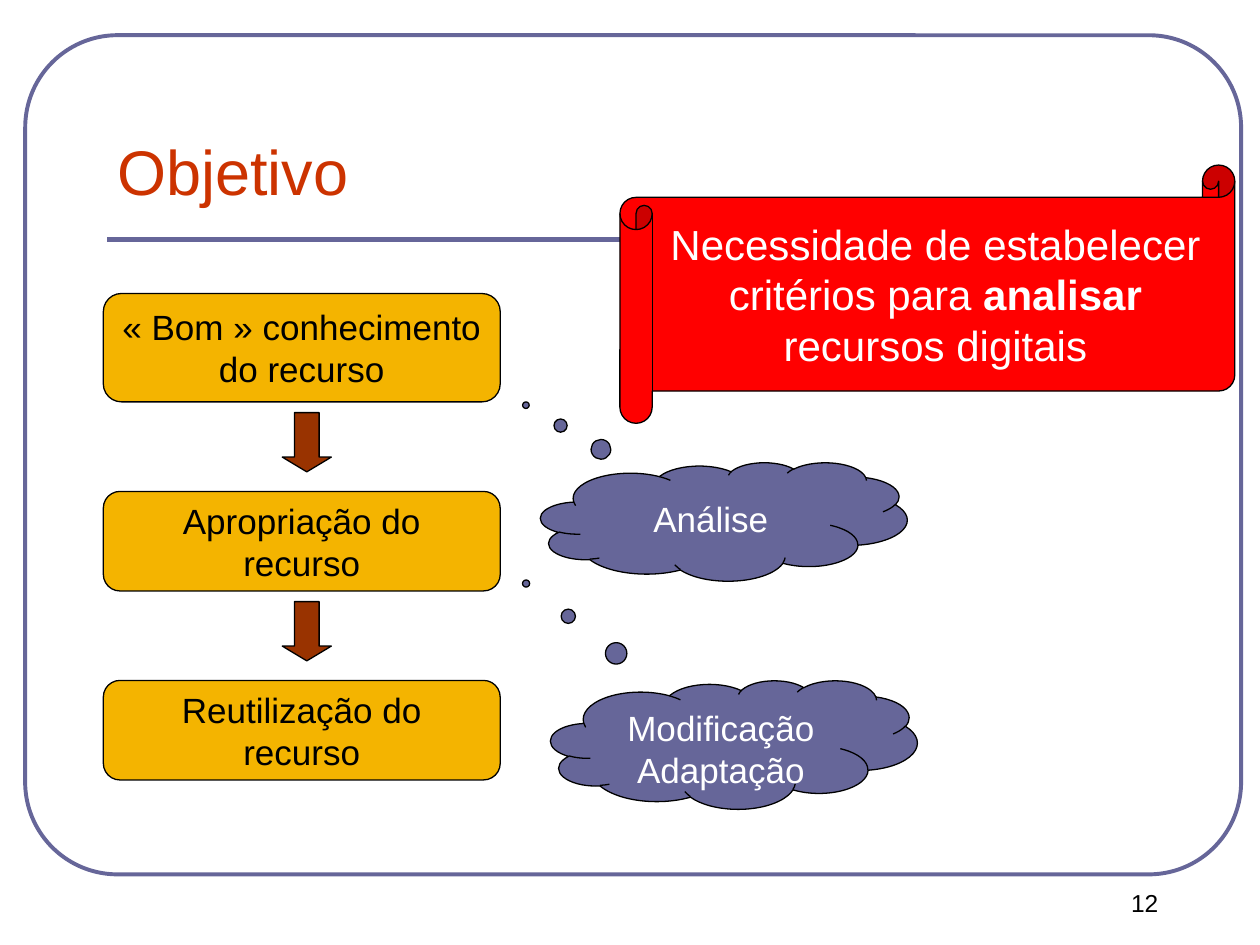
from dataclasses import dataclass

from lxml.etree import SubElement
from pptx import Presentation
from pptx.dml.color import RGBColor
from pptx.enum.shapes import MSO_CONNECTOR, MSO_SHAPE
from pptx.enum.text import MSO_ANCHOR, PP_ALIGN
from pptx.oxml.ns import qn
from pptx.util import Inches, Pt

COLUMNS, ROWS = 100, 75
SLIDE_WIDTH, SLIDE_HEIGHT = Inches(10), Inches(7.5)


@dataclass(frozen=True)
class Theme:
    font: str = "Arial"
    ink: str = "000000"
    paper: str = "FFFFFF"
    heading: str = "CC3300"
    violet: str = "666699"
    amber: str = "F4B400"
    rust: str = "993300"
    alert: str = "FF0000"
    title_size: float = 36
    banner_size: float = 24
    body_size: float = 20
    number_size: float = 14
    outline: float = 0.75
    frame_line: float = 2.25
    rule_line: float = 3


@dataclass(frozen=True)
class Box:
    col: float
    row: float
    cols: float
    rows: float

    def emu(self):
        x, y = SLIDE_WIDTH / COLUMNS, SLIDE_HEIGHT / ROWS
        return (round(self.col * x), round(self.row * y),
                round(self.cols * x), round(self.rows * y))


THEME = Theme()


def color(code):
    return RGBColor.from_string(code)


def write(frame, runs, size, ink, align=PP_ALIGN.CENTER, anchor=MSO_ANCHOR.MIDDLE):
    frame.word_wrap = True
    frame.vertical_anchor = anchor
    paragraph = frame.paragraphs[0]
    paragraph.alignment = align
    paragraph.font.name = THEME.font
    paragraph.font.size = Pt(size)
    paragraph.font.color.rgb = color(ink)
    for text, bold in runs:
        run = paragraph.add_run()
        run.text = text
        if bold:
            run.font.bold = True


def draw(slide, kind, box, fill, adjustments, line=THEME.ink, width=THEME.outline):
    shape = slide.shapes.add_shape(kind, *box.emu())
    shape.shadow.inherit = False
    if fill:
        shape.fill.solid()
        shape.fill.fore_color.rgb = color(fill)
    else:
        shape.fill.background()
    shape.line.color.rgb = color(line)
    shape.line.width = Pt(width)
    for index, value in enumerate(adjustments):
        shape.adjustments[index] = value
    return shape


def add_frame(slide, box):
    draw(slide, MSO_SHAPE.ROUNDED_RECTANGLE, box, None, [0.11],
         THEME.violet, THEME.frame_line)


def add_heading(slide, box, text):
    title = slide.shapes.title
    title.left, title.top, title.width, title.height = box.emu()
    write(title.text_frame, [(text, False)], THEME.title_size, THEME.heading,
          PP_ALIGN.LEFT, MSO_ANCHOR.BOTTOM)
    left, top, width, height = Box(box.col + 0.2, box.row, box.cols - 0.1,
                                   box.rows + 2).emu()
    rule = slide.shapes.add_connector(MSO_CONNECTOR.STRAIGHT, left, top + height,
                                      left + width, top + height)
    rule.line.color.rgb = color(THEME.violet)
    rule.line.width = Pt(THEME.rule_line)
    SubElement(rule._element.spPr, qn("a:effectLst"))


def add_steps(slide, box, steps):
    gap = (box.rows - sum(rows for _, rows in steps)) / (len(steps) - 1)
    arrow_cols, arrow_rows, arrow_drop = 4.7, 3.9, 3.2
    row = box.row
    for index, (text, rows) in enumerate(steps):
        step = draw(slide, MSO_SHAPE.ROUNDED_RECTANGLE,
                    Box(box.col, row, box.cols, rows), THEME.amber, [0.167])
        write(step.text_frame, [(text, False)], THEME.body_size, THEME.ink)
        row += rows
        if index < len(steps) - 1:
            arrow = draw(slide, MSO_SHAPE.RIGHT_ARROW,
                         Box(box.col + box.cols / 2 + 0.4 - arrow_cols / 2,
                             row + arrow_drop - arrow_rows / 2,
                             arrow_cols, arrow_rows), THEME.rust, [0.5, 0.3])
            arrow.rotation = 90
        row += gap


def add_thought(slide, box, text, tail, anchor):
    cloud = draw(slide, MSO_SHAPE.CLOUD_CALLOUT, box, THEME.violet, tail)
    write(cloud.text_frame, [(text, False)], THEME.body_size, THEME.paper,
          anchor=anchor)


def add_banner(slide, box, runs):
    scroll = draw(slide, MSO_SHAPE.HORIZONTAL_SCROLL, box, THEME.alert, [0.125])
    write(scroll.text_frame, runs, THEME.banner_size, THEME.paper)


def add_page_number(slide, box, number):
    label = slide.shapes.add_textbox(*box.emu())
    write(label.text_frame, [(number, False)], THEME.number_size, THEME.ink,
          anchor=MSO_ANCHOR.TOP)


def main():
    deck = Presentation()
    deck.slide_width, deck.slide_height = SLIDE_WIDTH, SLIDE_HEIGHT
    slide = deck.slides.add_slide(deck.slide_layouts[5])
    add_frame(slide, Box(2, 2.8, 96.5, 66.6))
    add_heading(slide, Box(8.3, 5.8, 84.2, 11.2), "Objetivo")
    add_page_number(slide, Box(82.1, 70, 17.5, 5), "12")
    add_steps(slide, Box(8.2, 23.3, 31.5, 38.6), [
        ("« Bom » conhecimento do recurso", 8.6),
        ("Apropriação do recurso", 7.9),
        ("Reutilização do recurso", 7.9),
    ])
    add_thought(slide, Box(43.7, 54, 29.1, 10.2), "Modificação Adaptação",
                [-0.567, -1.254], MSO_ANCHOR.TOP)
    add_thought(slide, Box(42.9, 36.7, 29.1, 9.4), "Análise",
                [-0.54, -0.983], MSO_ANCHOR.MIDDLE)
    add_banner(slide, Box(49.2, 13.1, 48.8, 20.5), [
        ("Necessidade de estabelecer critérios para ", False),
        ("analisar", True),
        (" recursos digitais", False),
    ])
    deck.save("out.pptx")


if __name__ == "__main__":
    main()
